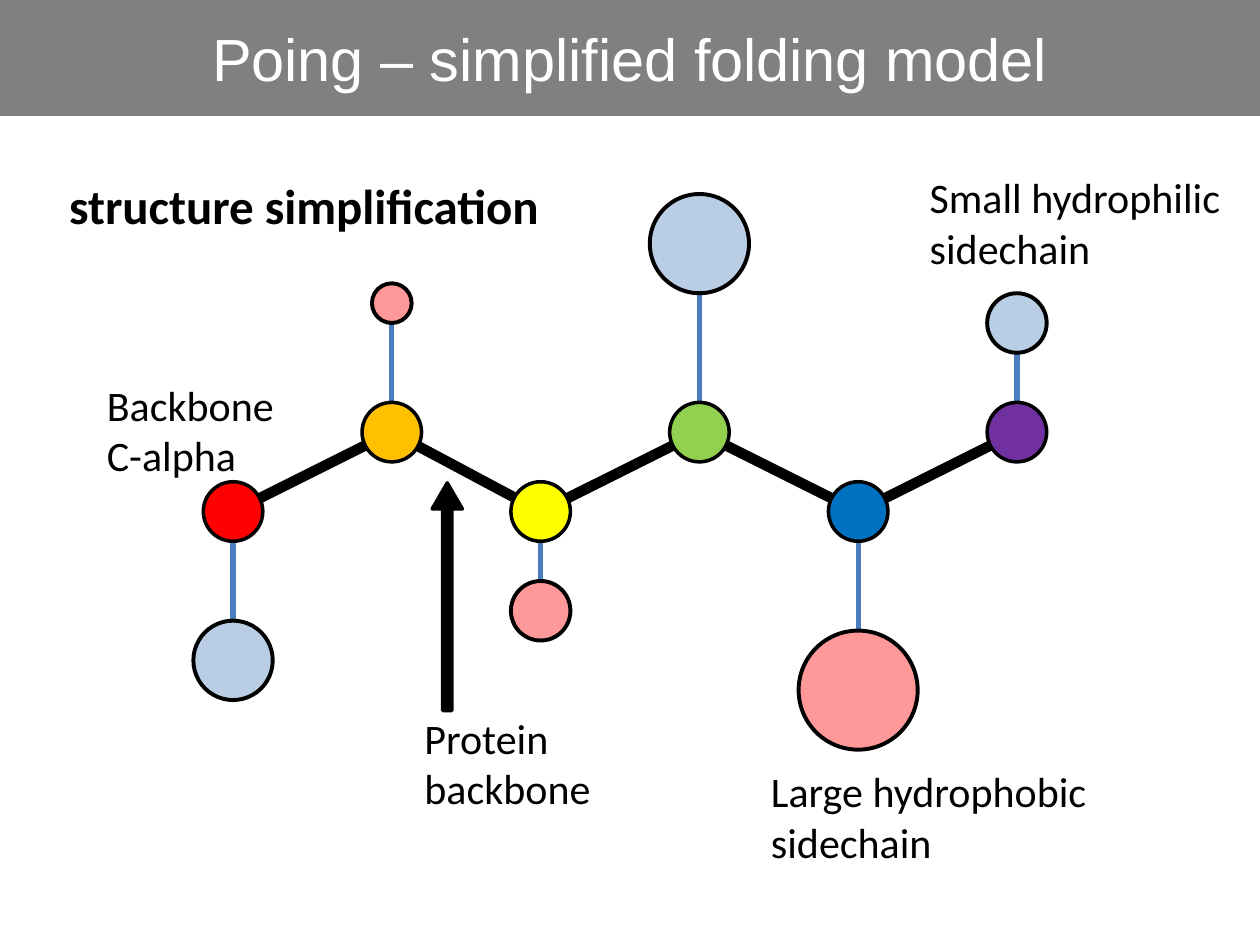
from lxml import etree
from pptx import Presentation
from pptx.dml.color import RGBColor
from pptx.enum.shapes import MSO_CONNECTOR, MSO_SHAPE
from pptx.enum.text import MSO_ANCHOR, PP_ALIGN
from pptx.oxml.ns import qn
from pptx.util import Inches, Pt

OVAL, ARROW, RECT = MSO_SHAPE.OVAL, MSO_SHAPE.UP_ARROW, MSO_SHAPE.RECTANGLE
STRAIGHT = MSO_CONNECTOR.STRAIGHT
MIDDLE, CENTER = MSO_ANCHOR.MIDDLE, PP_ALIGN.CENTER

THEME = {
    "black": RGBColor.from_string("000000"),
    "white": RGBColor.from_string("FFFFFF"),
    "band": RGBColor.from_string("808080"),
    "bond": RGBColor.from_string("4B7EBC"),
    "phobic": RGBColor.from_string("FF9999"),
    "philic": RGBColor.from_string("B9CDE5"),
    "title": Pt(34), "head": Pt(28), "label": Pt(24),
    "title font": "Arial", "font": "Calibri",
}

deck = Presentation()
deck.slide_width, deck.slide_height = Inches(10), Inches(7.5)
slide = deck.slides.add_slide(deck.slide_layouts[6])
shapes = slide.shapes
wide, high = deck.slide_width / 100, deck.slide_height / 100  # one percent

# The chain sits on a square grid whose origin is the first C-alpha
UNIT = Inches(0.1575)
LEFT, TOP = Inches(1.85), Inches(4.06)
BEAD = 3


def draw_line(start, end, color, width):
    """Join two grid points."""
    (x1, y1), (x2, y2) = start, end
    line = shapes.add_connector(
        STRAIGHT, int(LEFT + x1 * UNIT), int(TOP + y1 * UNIT),
        int(LEFT + x2 * UNIT), int(TOP + y2 * UNIT))
    line.line.color.rgb = color
    line.line.width = Pt(width)
    etree.SubElement(line._element.spPr, qn("a:effectLst"))


def draw_shape(kind, box, fill, width=0):
    """Add a filled shape; a width of 0 leaves out the black outline."""
    shape = shapes.add_shape(kind, *(int(n) for n in box))
    shape.shadow.inherit = False
    shape.fill.solid()
    shape.fill.fore_color.rgb = fill
    if width:
        shape.line.color.rgb = THEME["black"]
        shape.line.width = Pt(width)
    else:
        shape.line.fill.background()
    return shape


# column, row, colour, sidechain offset in rows, sidechain size, sidechain kind
chain = [
    (0, 0, "FF0000", 7.5, 4, "philic"),
    (8, -4, "FFC000", -6.5, 2, "phobic"),
    (15.5, 0, "FFFF00", 5, 3, "phobic"),
    (23.5, -4, "92D050", -9.5, 5, "philic"),
    (31.5, 0, "0070C0", 9, 6, "phobic"),
    (39.5, -4, "7030A0", -5.5, 3, "philic"),
]

for col, row, _, drop, _, _ in chain:
    draw_line((col, row), (col, row + drop), THEME["bond"], 3)
for one, two in zip(chain, chain[1:]):
    draw_line(one[:2], two[:2], THEME["black"], 6)

for col, row, color, drop, size, kind in chain:
    beads = [(row, BEAD, RGBColor.from_string(color), 2),
             (row + drop, size, THEME[kind], 2.25)]
    for mid, span, fill, width in beads:
        box = (LEFT + (col - span / 2) * UNIT, TOP + (mid - span / 2) * UNIT,
               span * UNIT, span * UNIT)
        draw_shape(OVAL, box, fill, width)

arrow = draw_shape(ARROW, (34.3 * wide, 51.1 * high, 2.4 * wide, 24.1 * high),
                   THEME["black"], 2)
arrow.adjustments[0], arrow.adjustments[1] = 0.3, 0.86

# text, left, top, width, height in percent of the slide, type size
labels = [
    ("structure simplification", 4.5, 17.9, 40.8, 7.6, "head"),
    ("Protein backbone", 32.7, 74.7, 15.7, 12.1, "label"),
    ("Small hydrophilic sidechain", 72.8, 17.5, 25.2, 12.1, "label"),
    ("Large hydrophobic sidechain", 60.2, 80.4, 27.2, 12.1, "label"),
    ("Backbone\nC-alpha", 7.5, 39.5, 15.7, 12.1, "label"),
]
for text, x, y, w, h, size in labels:
    frame = shapes.add_textbox(int(x * wide), int(y * high),
                               int(w * wide), int(h * high)).text_frame
    frame.word_wrap = size == "label"
    frame.text = text
    for para in frame.paragraphs:
        font = para.runs[0].font
        font.name, font.size = THEME["font"], THEME[size]
        font.bold = size == "head"
        font.color.rgb = THEME["black"]

band = draw_shape(RECT, (0, 0, 100 * wide, 12.27 * high), THEME["band"])
frame = band.text_frame
frame.vertical_anchor = MIDDLE
frame.text = "Poing – simplified folding model"
title = frame.paragraphs[0]
title.alignment = CENTER
font = title.runs[0].font
font.name, font.size = THEME["title font"], THEME["title"]
font.color.rgb = THEME["white"]

deck.save("out.pptx")
